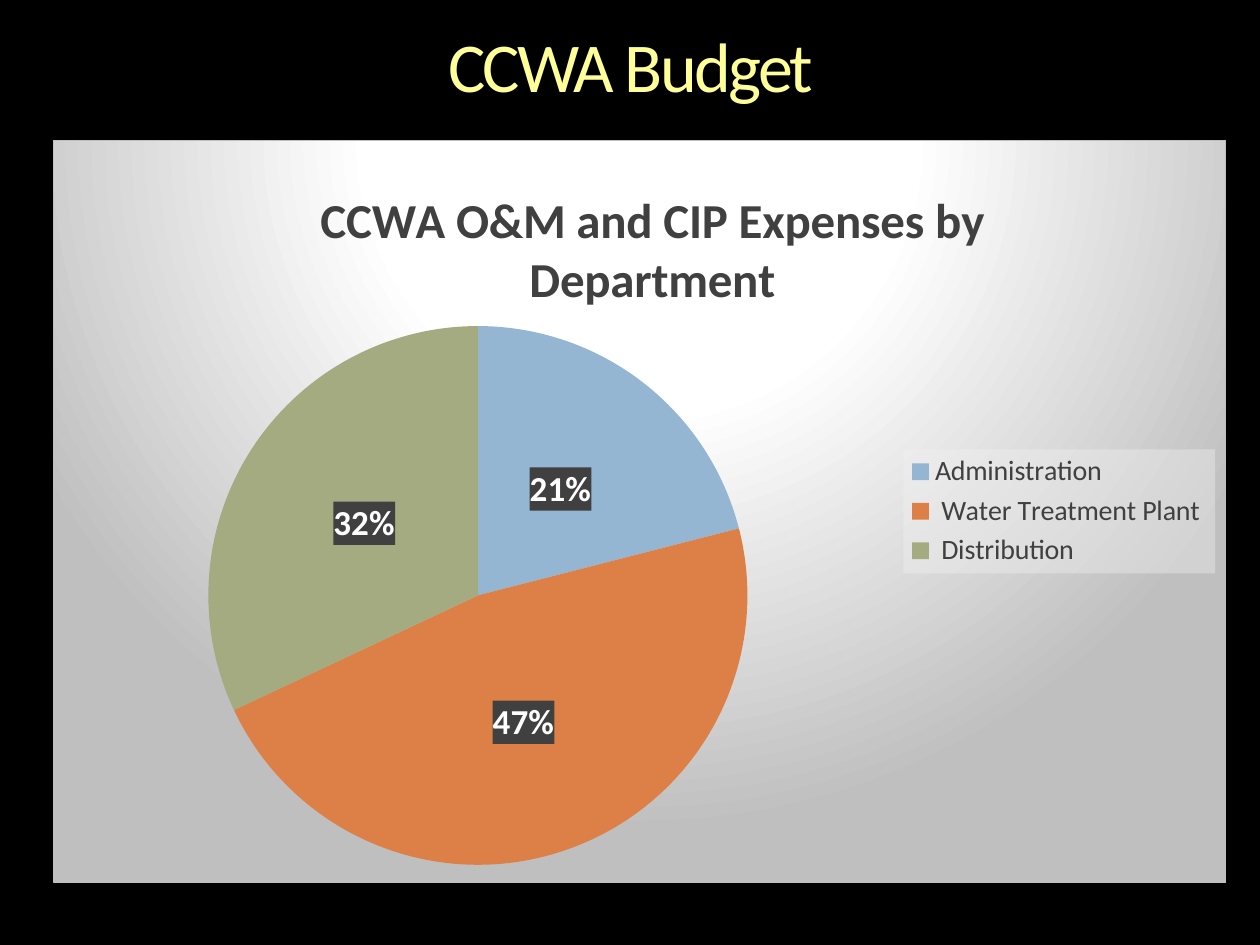
import pptx
import pptx.chart.data
import pptx.dml.color
import pptx.enum.chart
import pptx.enum.text
import pptx.oxml
import pptx.oxml.ns
import pptx.util
from pptx.util import Cm, Pt

RGBColor = pptx.dml.color.RGBColor
BLACK = RGBColor(0x00, 0x00, 0x00)
WHITE = RGBColor(0xFF, 0xFF, 0xFF)
YELLOW = RGBColor(0xFF, 0xFF, 0x99)
DARK_GREY = RGBColor(0x40, 0x40, 0x40)
PALE_GREY = RGBColor(0xF2, 0xF2, 0xF2)
MID_GREY = RGBColor(0xBF, 0xBF, 0xBF)
BLUE = RGBColor(0x94, 0xB6, 0xD2)
ORANGE = RGBColor(0xDD, 0x80, 0x47)
GREEN = RGBColor(0xA5, 0xAB, 0x81)

FONT = "Calibri"
EXPENSES = [
    ("Administration", 21, BLUE),
    (" Water Treatment Plant ", 47, ORANGE),
    (" Distribution ", 32, GREEN),
]
NAMESPACES = pptx.oxml.ns.nsdecls("c", "a")


def style_font(font, size, color, bold=False):
    font.name = FONT
    font.size = Pt(size)
    font.bold = bold
    font.color.rgb = color


def add_title(slide, text):
    title = slide.shapes.title
    title.left, title.top, title.width, title.height = Cm(1.07), Cm(0.64), Cm(23.29), Cm(1.55)
    frame = title.text_frame
    frame.margin_left = frame.margin_right = frame.margin_top = frame.margin_bottom = 0
    frame.vertical_anchor = pptx.enum.text.MSO_ANCHOR.MIDDLE
    paragraph = frame.paragraphs[0]
    paragraph.alignment = pptx.enum.text.PP_ALIGN.CENTER
    paragraph.line_spacing = 0.9
    run = paragraph.add_run()
    run.text = text
    style_font(run.font, 40, YELLOW)
    run.font._element.set("spc", "-150")


def layout_xml(x, y, width=None, height=None, inner=False):
    """Manual layout in fractions of the chart area."""
    target = '<c:layoutTarget val="inner"/>' if inner else ""
    modes = '<c:xMode val="edge"/><c:yMode val="edge"/>'
    sides = {"x": x, "y": y, "w": width, "h": height}
    values = "".join(f'<c:{side} val="{value}"/>' for side, value in sides.items() if value is not None)
    return pptx.oxml.parse_xml(
        f"<c:layout {NAMESPACES}><c:manualLayout>{target}{modes}{values}</c:manualLayout></c:layout>"
    )


def place(parent, layout, predecessor=None):
    """Set the layout of a chart part, right after the named child if one is given."""
    for previous in parent.findall(pptx.oxml.ns.qn("c:layout")):
        parent.remove(previous)
    if predecessor is None:
        parent.insert(0, layout)
    else:
        parent.find(pptx.oxml.ns.qn(predecessor)).addnext(layout)


def set_area_format(parent, content):
    """Give a chart part its fill and line, just before its text properties."""
    area = pptx.oxml.parse_xml(f"<c:spPr {NAMESPACES}>{content}</c:spPr>")
    parent.find(pptx.oxml.ns.qn("c:txPr")).addprevious(area)


def translucent_fill(color, percent):
    return f'<a:solidFill><a:srgbClr val="{color}"><a:alpha val="{percent * 1000}"/></a:srgbClr></a:solidFill>'


def spotlight_fill():
    stops = "".join(
        f'<a:gs pos="{position * 1000}"><a:srgbClr val="{color}"/></a:gs>'
        for position, color in [(0, WHITE), (39, WHITE), (100, MID_GREY)]
    )
    return (
        f'<a:gradFill><a:gsLst>{stops}</a:gsLst><a:path path="circle">'
        '<a:fillToRect l="50000" t="-80000" r="50000" b="180000"/></a:path></a:gradFill>'
        f'<a:ln w="{Pt(0.75)}"><a:solidFill><a:srgbClr val="{MID_GREY}"/></a:solidFill></a:ln>'
    )


def add_chart_title(chart, text):
    chart.has_title = True
    run = chart.chart_title.text_frame.paragraphs[0].add_run()
    run.text = text
    style_font(run.font, 28, DARK_GREY, bold=True)
    place(chart.chart_title._element, layout_xml(0.22, 0.05), "c:tx")


def add_legend(chart):
    chart.has_legend = True
    legend = chart.legend
    legend.position = pptx.enum.chart.XL_LEGEND_POSITION.RIGHT
    legend.include_in_layout = False
    style_font(legend.font, 16, DARK_GREY)
    place(legend._element, layout_xml(0.725, 0.416, 0.266, 0.167), "c:legendPos")
    set_area_format(legend._element, translucent_fill(PALE_GREY, 39))


def add_percent_labels(series):
    labels = series.data_labels
    labels.show_value = False
    labels.show_percentage = True
    labels.number_format = "0%"
    labels.number_format_is_linked = False
    labels.position = pptx.enum.chart.XL_LABEL_POSITION.CENTER
    style_font(labels.font, 20, WHITE, bold=True)
    set_area_format(labels._element, translucent_fill(DARK_GREY, 90))


def add_expense_pie(slide):
    data = pptx.chart.data.CategoryChartData()
    data.categories = [department for department, _, _ in EXPENSES]
    data.add_series("Series 1", [share for _, share, _ in EXPENSES])
    chart = slide.shapes.add_chart(
        pptx.enum.chart.XL_CHART_TYPE.PIE, Cm(1.07), Cm(2.82), Cm(23.65), Cm(14.99), data
    ).chart
    style_font(chart.font, 10, WHITE)
    set_area_format(chart._chartSpace, spotlight_fill())
    add_chart_title(chart, "CCWA O&M and CIP Expenses by Department")
    add_legend(chart)

    plot_area = chart._chartSpace.chart.plotArea
    place(plot_area, layout_xml(0.132, 0.25, 0.46, 0.726, inner=True))
    series = chart.plots[0].series[0]
    for index, (_, _, color) in enumerate(EXPENSES):
        slice_format = series.points[index].format
        slice_format.fill.solid()
        slice_format.fill.fore_color.rgb = color
        slice_format.line.fill.background()
    add_percent_labels(series)


def main():
    presentation = pptx.Presentation()
    presentation.slide_width, presentation.slide_height = Cm(25.4), Cm(19.05)
    slide = presentation.slides.add_slide(presentation.slide_layouts[5])
    slide.background.fill.solid()
    slide.background.fill.fore_color.rgb = BLACK
    add_title(slide, "CCWA Budget")
    add_expense_pie(slide)
    presentation.save("out.pptx")


if __name__ == "__main__":
    main()
